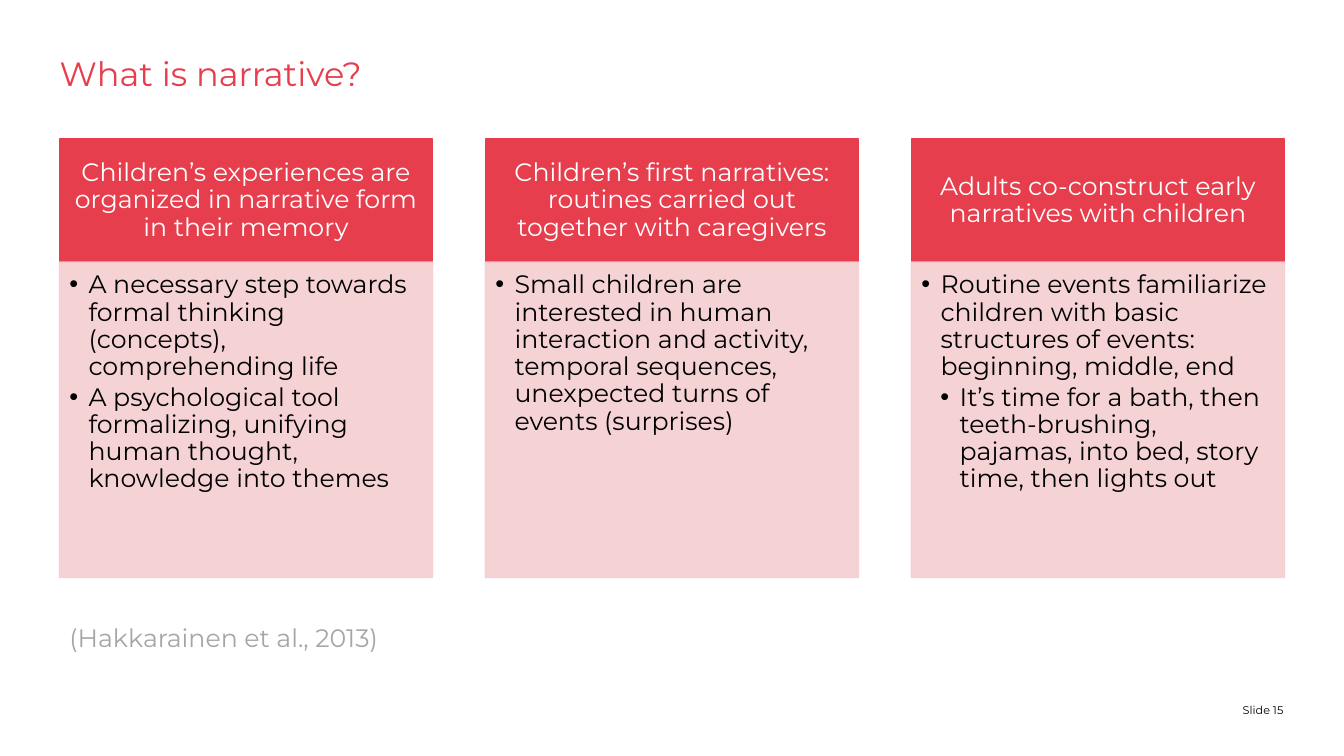
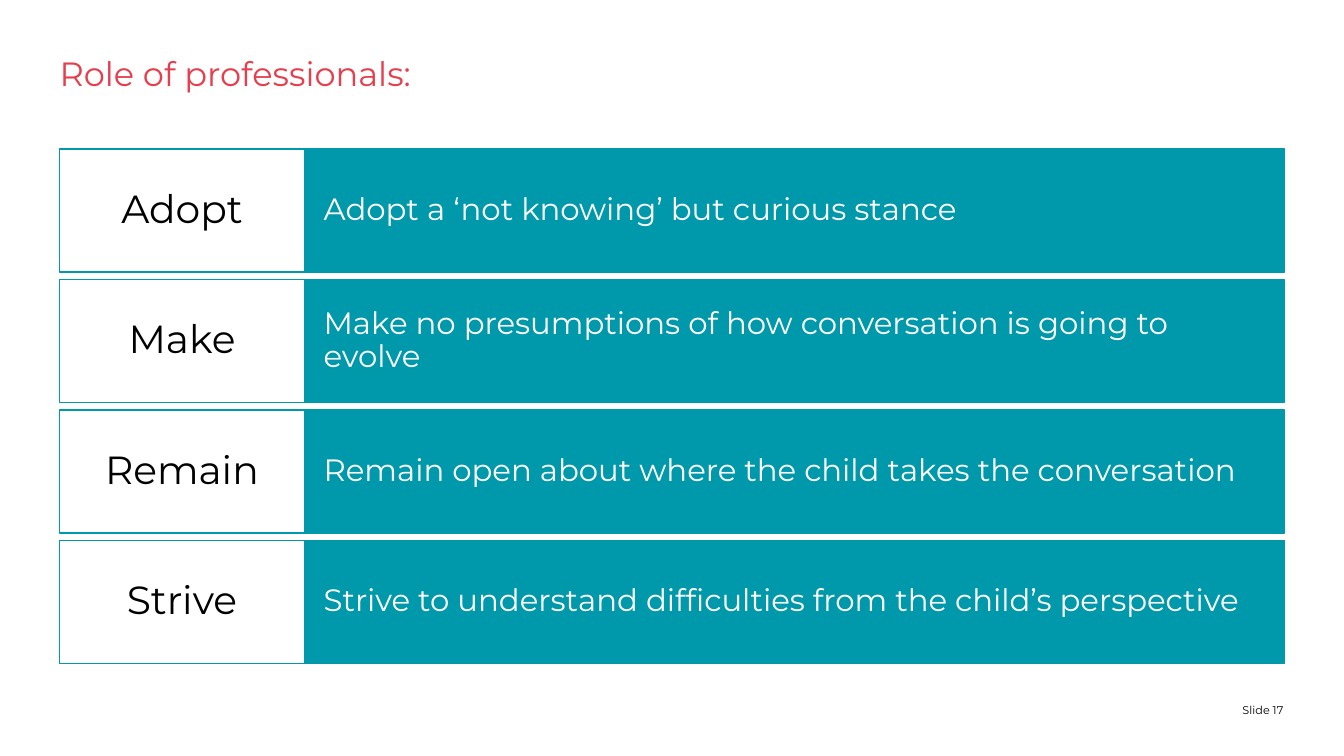
"""Build two slides on children's narratives and the role of professionals."""
from lxml import etree
from pptx import Presentation, util as u
from pptx.dml.color import RGBColor
from pptx.enum import shapes, text
from pptx.oxml import ns

THEME = {
    "font": "Montserrat",
    "red": "E63E4D", "pink": "F5CED0", "teal": "0099AC",
    "white": "FFFFFF", "black": "000000", "grey": "A6A6A6",
    "title": 24, "body": 18, "verb": 28, "advice": 22, "footer": 8,
}
LEFT, WIDTH = 0.59, 12.15
MIDDLE, BOTTOM = text.MSO_ANCHOR.MIDDLE, text.MSO_ANCHOR.BOTTOM
CENTER, RIGHT = text.PP_ALIGN.CENTER, text.PP_ALIGN.RIGHT

TITLE = {"color": "red", "size": "title", "insets": (0, 0, 0, 0), "para": {"line_spacing": 0.83}}
FOOTER = {"color": "black", "size": "footer", "insets": (0, 0, 0, 0),
          "frame": {"vertical_anchor": BOTTOM}, "para": {"alignment": RIGHT}}
HEADING = {"fill": "red", "line": "red", "color": "white", "size": "body",
           "insets": (0.14, 0.08, 0.14, 0.08), "frame": {"vertical_anchor": MIDDLE},
           "para": {"alignment": CENTER, "line_spacing": 0.9}}
POINTS = {"fill": "pink", "line": "pink", "alpha": 90, "color": "black", "size": "body",
          "insets": (0.1, 0.1, 0.14, 0.16), "bullet_indent": 0.19,
          "frame": {"vertical_anchor": text.MSO_ANCHOR.TOP},
          "para": {"alignment": text.PP_ALIGN.LEFT, "line_spacing": 0.9, "space_after": u.Pt(2.5)}}
SOURCE = {"color": "grey", "size": "body", "insets": (0.1, 0.05, 0.1, 0.05),
          "frame": {"word_wrap": False, "auto_size": text.MSO_AUTO_SIZE.SHAPE_TO_FIT_TEXT}}
VERB = {"fill": "white", "line": "teal", "color": "black", "size": "verb",
        "insets": (0.13, 0.12, 0.13, 0.12), "frame": {"vertical_anchor": MIDDLE},
        "para": {"alignment": CENTER, "line_spacing": 0.9}}
ADVICE = {"fill": "teal", "line": "teal", "color": "white", "size": "advice",
          "insets": (0.19, 0.31, 0.19, 0.31), "frame": {"vertical_anchor": MIDDLE},
          "para": {"alignment": text.PP_ALIGN.LEFT, "line_spacing": 0.9}}


def add_box(s, at, paragraphs, style):
    at = [u.Inches(v) for v in at]
    if "fill" in style:
        sp = s.shapes.add_shape(shapes.MSO_SHAPE.RECTANGLE, *at)
        sp.shadow.inherit = False
        sp.line.width = u.Pt(1)
        for paint, key in ((sp.fill, "fill"), (sp.line.fill, "line")):
            paint.solid()
            paint.fore_color.rgb = RGBColor.from_string(THEME[style[key]])
        if "alpha" in style:
            for color in sp._element.spPr.iter(ns.qn("a:srgbClr")):
                etree.SubElement(color, ns.qn("a:alpha"), val=str(style["alpha"] * 1000))
    else:
        sp = s.shapes.add_textbox(*at)
    tf = sp.text_frame
    tf.word_wrap = True
    for side, inset in zip(("left", "top", "right", "bottom"), style["insets"]):
        setattr(tf, f"margin_{side}", u.Inches(inset))
    for name, value in style.get("frame", {}).items():
        setattr(tf, name, value)
    for i, (level, words) in enumerate(paragraphs):
        p = tf.paragraphs[0] if i == 0 else tf.add_paragraph()
        if "bullet_indent" in style:
            indent = u.Inches(style["bullet_indent"])
            p.level = level
            pPr = p._p.get_or_add_pPr()
            pPr.set("marL", str(indent * level))
            pPr.set("indent", str(-indent))
            etree.SubElement(pPr, ns.qn("a:buFont"), typeface="Arial")
            etree.SubElement(pPr, ns.qn("a:buChar"), char="•")
        for name, value in style.get("para", {}).items():
            setattr(p, name, value)
        r = p.add_run()
        r.text = words
        for name, value in {"name": THEME["font"], "size": u.Pt(THEME[style["size"]])}.items():
            setattr(r.font, name, value)
        r.font.color.rgb = RGBColor.from_string(THEME[style["color"]])


def add_slide(prs, title, number):
    s = prs.slides.add_slide(prs.slide_layouts[6])
    add_box(s, (LEFT, 0.59, WIDTH, 0.88), [(0, title)], TITLE)
    add_box(s, (11.9, 6.87, 0.83, 0.24), [(0, f"Slide {number}")], FOOTER)
    return s


prs = Presentation()
prs.slide_width, prs.slide_height = u.Inches(13.33), u.Inches(7.5)

s = add_slide(prs, "What is narrative?", 15)
columns = [
    ("Children’s experiences are organized in narrative form in their memory",
     [(1, "A necessary step towards formal thinking (concepts), comprehending life"),
      (1, "A psychological tool formalizing, unifying human thought, knowledge into themes")]),
    ("Children’s first narratives: routines carried out together with caregivers",
     [(1, "Small children are interested in human interaction and activity, "
          "temporal sequences, unexpected turns of events (surprises)")]),
    ("Adults co-construct early narratives with children",
     [(1, "Routine events familiarize children with basic structures of events: "
          "beginning, middle, end"),
      (2, "It’s time for a bath, then teeth-brushing, pajamas, into bed, "
          "story time, then lights out")]),
]
column_top, column_width, heading_height, points_height = 1.38, 3.7, 1.22, 3.13
column_step = (WIDTH - column_width) / (len(columns) - 1)
for i, (heading, points) in enumerate(columns):
    x = LEFT + i * column_step
    add_box(s, (x, column_top, column_width, heading_height), [(0, heading)], HEADING)
    add_box(s, (x, column_top + heading_height, column_width, points_height), points, POINTS)
add_box(s, (LEFT, 6.12, 3.26, 0.4), [(0, "(Hakkarainen et al., 2013)")], SOURCE)

s = add_slide(prs, "Role of professionals:", 17)
rows = [
    ("Adopt", "Adopt a ‘not knowing’ but curious stance"),
    ("Make", "Make no presumptions of how conversation is going to evolve"),
    ("Remain", "Remain open about where the child takes the conversation"),
    ("Strive", "Strive to understand difficulties from the child’s perspective"),
]
rows_top, rows_height, row_height = 1.48, 5.1, 1.22
verb_width = WIDTH / 5
row_step = (rows_height - row_height) / (len(rows) - 1)
for i, (verb, advice) in enumerate(rows):
    y = rows_top + i * row_step
    add_box(s, (LEFT + verb_width, y, WIDTH - verb_width, row_height), [(0, advice)], ADVICE)
    add_box(s, (LEFT, y, verb_width, row_height), [(0, verb)], VERB)

prs.save("out.pptx")
